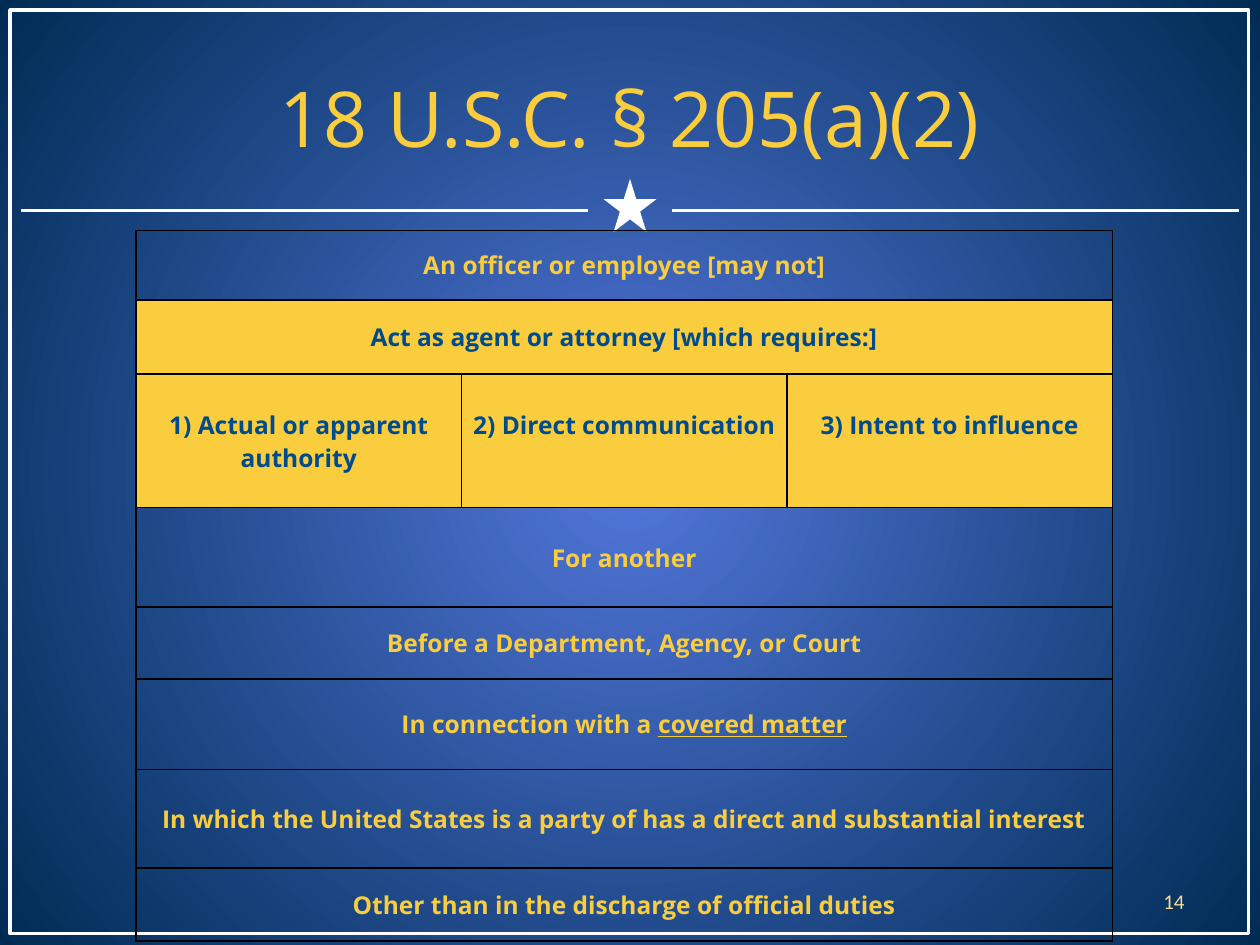
from dataclasses import dataclass

from lxml.etree import SubElement
from pptx import Presentation
from pptx.dml.color import RGBColor
from pptx.enum.shapes import MSO_CONNECTOR, MSO_SHAPE
from pptx.enum.text import MSO_ANCHOR, PP_ALIGN
from pptx.oxml.ns import qn
from pptx.slide import Slide
from pptx.table import Table, _Cell
from pptx.util import Inches, Pt

COLORS = {
    "gold": "F9CD3D",
    "pale_gold": "FBDB92",
    "navy": "004B8D",
    "center": "5176DA",
    "edge": "002C54",
    "white": "FFFFFF",
    "black": "000000",
}


@dataclass
class Row:
    height: float
    texts: tuple[str, ...]
    filled: bool = False
    underlined: str = ""
    top_inset: float = 0


ROWS = [
    Row(0.55, ("An officer or employee [may not]",)),
    Row(0.59, ("Act as agent or attorney [which requires:]",), True),
    Row(1.06, ("1) Actual or apparent authority", "2) Direct communication",
               "3) Intent to influence"), True, top_inset=0.27),
    Row(0.79, ("For another",)),
    Row(0.57, ("Before a Department, Agency, or Court",)),
    Row(0.72, ("In connection with a ",), underlined="covered matter"),
    Row(0.78, ("In which the United States is a party of has a direct and substantial interest",)),
    Row(0.58, ("Other than in the discharge of official duties",)),
]
COLUMNS = 3


def rgb(name: str) -> RGBColor:
    return RGBColor.from_string(COLORS[name])


def set_background(s: Slide) -> None:
    fill = s.background.fill
    fill.gradient()
    for stop, name in zip(fill.gradient_stops, ("center", "edge")):
        stop.color.rgb = rgb(name)
    grad = s.element.find(".//" + qn("a:gradFill"))
    grad.remove(grad.find(qn("a:lin")))
    circle = SubElement(grad, qn("a:path"), path="circle")
    SubElement(circle, qn("a:fillToRect"), l="50000", t="50000", r="50000", b="50000")


def add_rule(s: Slide, x1: float, x2: float, y: float) -> None:
    line = s.shapes.add_connector(MSO_CONNECTOR.STRAIGHT, Inches(x1), Inches(y),
                                  Inches(x2), Inches(y))
    line.line.color.rgb = rgb("white")
    line.line.width = Pt(2)
    SubElement(line.element.spPr, qn("a:effectLst"))


def add_frame(s: Slide) -> None:
    sp = s.shapes.add_shape(MSO_SHAPE.RECTANGLE, Inches(0.08), Inches(0.08),
                            Inches(9.83), Inches(7.33))
    sp.shadow.inherit = False
    sp.fill.background()
    sp.line.color.rgb = rgb("white")
    sp.line.width = Pt(2)


def add_star(s: Slide) -> None:
    sp = s.shapes.add_shape(MSO_SHAPE.STAR_5_POINT, Inches(4.79), Inches(1.42),
                            Inches(0.42), Inches(0.42))
    sp.shadow.inherit = False
    sp.fill.solid()
    sp.fill.fore_color.rgb = rgb("white")
    sp.line.fill.background()


def add_text(s: Slide, text: str, box: tuple[float, float, float, float],
             font: str, size: int, color: str, align: PP_ALIGN) -> None:
    tf = s.shapes.add_textbox(*map(Inches, box)).text_frame
    tf.word_wrap = True
    tf.vertical_anchor = MSO_ANCHOR.MIDDLE
    p = tf.paragraphs[0]
    p.text = text
    p.alignment = align
    p.font.name = font
    p.font.size = Pt(size)
    p.font.color.rgb = rgb(color)


def set_borders(cell: _Cell) -> None:
    tc_pr = cell._tc.get_or_add_tcPr()
    for side in ("lnL", "lnR", "lnT", "lnB"):
        ln = SubElement(tc_pr, qn(f"a:{side}"), w=str(Pt(1)))
        SubElement(SubElement(ln, qn("a:solidFill")), qn("a:srgbClr"), val=COLORS["black"])


def style_cell(cell: _Cell, row: Row) -> None:
    set_borders(cell)
    if row.filled:
        cell.fill.solid()
        cell.fill.fore_color.rgb = rgb("gold")
    else:
        cell.fill.background()
    cell.margin_left = cell.margin_right = Inches(0.07)
    cell.margin_top = Inches(row.top_inset)
    cell.margin_bottom = 0
    cell.vertical_anchor = MSO_ANCHOR.TOP if row.top_inset else MSO_ANCHOR.MIDDLE


def write_cell(cell: _Cell, text: str, row: Row) -> None:
    p = cell.text_frame.paragraphs[0]
    p.alignment = PP_ALIGN.CENTER
    p.font.name = "Open Sans"
    p.font.size = Pt(14)
    p.font.bold = True
    p.font.color.rgb = rgb("navy" if row.filled else "gold")
    p.add_run().text = text
    if row.underlined:
        r = p.add_run()
        r.text = row.underlined
        r.font.underline = True


def fill_table(table: Table) -> None:
    table.first_row = table.horz_banding = False
    for i, row in enumerate(ROWS):
        table.rows[i].height = Inches(row.height)
        for j in range(COLUMNS):
            style_cell(table.cell(i, j), row)
        if len(row.texts) == 1:
            table.cell(i, 0).merge(table.cell(i, COLUMNS - 1))
        for j, text in enumerate(row.texts):
            write_cell(table.cell(i, j), text, row)


def main() -> None:
    prs = Presentation()
    prs.slide_width, prs.slide_height = Inches(10), Inches(7.5)
    s = prs.slides.add_slide(prs.slide_layouts[6])
    set_background(s)
    add_rule(s, 0.17, 4.67, 1.67)
    add_star(s)
    add_rule(s, 5.33, 9.83, 1.67)
    add_frame(s)
    add_text(s, "18 U.S.C. § 205(a)(2)", (0.5, 0.3, 9, 1.25),
             "Open Sans", 44, "gold", PP_ALIGN.CENTER)
    add_text(s, "14", (7.17, 6.95, 2.33, 0.4), "Calibri", 12, "pale_gold", PP_ALIGN.RIGHT)
    height = sum(row.height for row in ROWS)
    fill_table(s.shapes.add_table(len(ROWS), COLUMNS, Inches(1.08), Inches(1.83),
                                  Inches(7.75), Inches(height)).table)
    prs.save("out.pptx")


if __name__ == "__main__":
    main()
